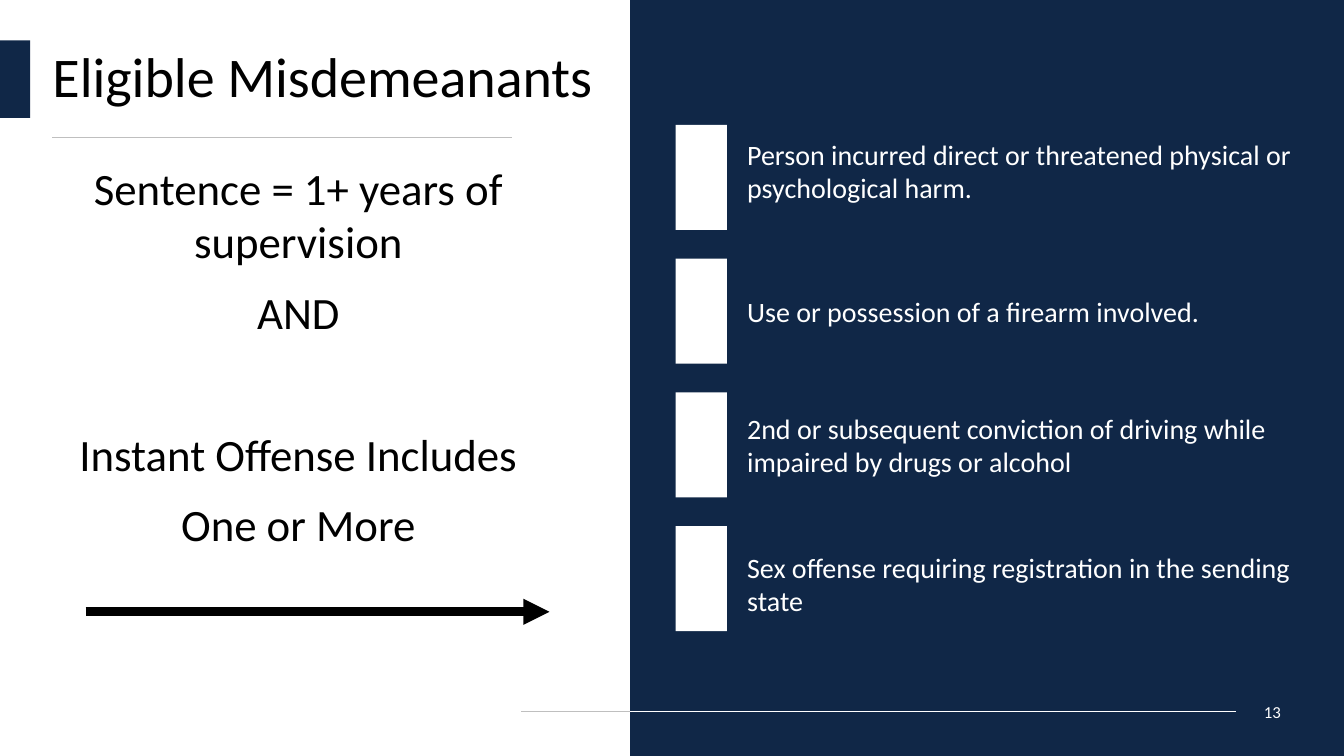
from pptx import Presentation
from pptx import util as u
from pptx.dml.color import RGBColor
from pptx.enum import shapes, text
from pptx.oxml.ns import qn
from lxml import etree

NAVY, WHITE, BLACK, GREY = "102747", "FFFFFF", "000000", "BFBFBF"
WIDE, HIGH = 13.33, 7.5
COLS, ROWS = 133.3, 75  # square grid of tenths of an inch


def color(code):
    return RGBColor.from_string(code)


class Deck:
    """Style, grid and current slide."""
    font = "Calibri"

    def __init__(self):
        self.prs = Presentation()
        self.prs.slide_width = u.Inches(WIDE)
        self.prs.slide_height = u.Inches(HIGH)
        self.slide = self.prs.slides.add_slide(self.prs.slide_layouts[1])
        self.items = self.slide.shapes

    def x(self, col):
        return u.Inches(col * WIDE / COLS)

    def y(self, row):
        return u.Inches(row * HIGH / ROWS)

    def area(self, col, row, wide, high):
        return self.x(col), self.y(row), self.x(wide), self.y(high)

    def bar(self, col, row, wide, high, fill):
        box = self.items.add_shape(shapes.MSO_SHAPE.RECTANGLE,
                                   *self.area(col, row, wide, high))
        box.shadow.inherit = False
        box.fill.solid()
        box.fill.fore_color.rgb = color(fill)
        box.line.fill.background()

    def rule(self, start, end, row, ink, width, arrow=False):
        line = self.items.add_connector(
            shapes.MSO_CONNECTOR.STRAIGHT,
            self.x(start), self.y(row), self.x(end), self.y(row))
        line.line.color.rgb = color(ink)
        line.line.width = u.Pt(width)
        props = line._element.spPr
        if arrow:
            etree.SubElement(props.find(qn("a:ln")), qn("a:tailEnd"),
                             type="triangle")
        etree.SubElement(props, qn("a:effectLst"))

    def fill_text(self, box, words, size, ink, align=text.PP_ALIGN.LEFT,
                  anchor=text.MSO_ANCHOR.TOP, after=0, lead=1.0):
        frame = box.text_frame
        frame.text = words
        frame.word_wrap = True
        frame.auto_size = text.MSO_AUTO_SIZE.NONE
        frame.vertical_anchor = anchor
        frame.margin_left = frame.margin_right = 0
        frame.margin_top = frame.margin_bottom = 0
        for para in frame.paragraphs:
            para.alignment = align
            para.line_spacing = lead
            para.space_before, para.space_after = u.Pt(0), u.Pt(after)
            for run in para.runs:
                run.font.name, run.font.size = self.font, u.Pt(size)
                run.font.color.rgb = color(ink)
        return frame

    def label(self, col, row, wide, high, words, size, ink, **style):
        box = self.items.add_textbox(*self.area(col, row, wide, high))
        self.fill_text(box, words, size, ink, **style)

    def holder(self, index, col, row, wide, high, words, size, ink, **style):
        box = self.slide.placeholders[index]
        box.left, box.top, box.width, box.height = self.area(
            col, row, wide, high)
        return self.fill_text(box, words, size, ink, **style)


def main():
    deck = Deck()
    mid, center = text.MSO_ANCHOR.MIDDLE, text.PP_ALIGN.CENTER

    # Right panel and footer
    deck.bar(62.5, 0, 70.8, 75, NAVY)
    deck.label(124.1, 68.6, 4.2, 4, "13", 12, WHITE, align=center, anchor=mid)
    deck.rule(57.7, 122.6, 70.6, WHITE, 0.5)
    deck.rule(51.7, 62.5, 70.6, GREY, 0.5)

    # Title
    deck.holder(0, 5.2, 4, 123.1, 7.7, "Eligible Misdemeanants", 40, BLACK,
                anchor=mid, lead=0.9)
    deck.bar(0, 4, 3, 7.7, NAVY)
    deck.rule(5.2, 50.8, 13.6, GREY, 0.5)

    # Conditions on the left, with a gap after AND
    lines = ["Sentence = 1+ years of supervision", "AND",
             "Instant Offense Includes", "One or More"]
    frame = deck.holder(1, 3, 15.9, 53.2, 49.6, "\n".join(lines), 32, BLACK,
                        align=center, after=12)
    for para in frame.paragraphs:
        props = para._p.get_or_add_pPr()
        props.set("marL", "0")
        props.set("indent", "0")
        etree.SubElement(props, qn("a:buNone"))
    frame.paragraphs[2].space_before = u.Pt(51)
    deck.rule(8.5, 54.5, 60.7, BLACK, 6.25, arrow=True)

    # Offense list: even bars, each with its text
    offenses = [
        (13.6, "Person incurred direct or threatened physical or "
               "psychological harm."),
        (29.2, "Use or possession of a firearm involved."),
        (40.8, "2nd or subsequent conviction of driving while "
               "impaired by drugs or alcohol"),
        (54.6, "Sex offense requiring registration in the sending state"),
    ]
    for i, (row, words) in enumerate(offenses):
        deck.bar(67, 12.4 + 13.27 * i, 5.1, 10.4, WHITE)
        deck.label(74.1, row, 54.2, 6.7, words, 20, WHITE)

    deck.prs.save("out.pptx")


if __name__ == "__main__":
    main()
